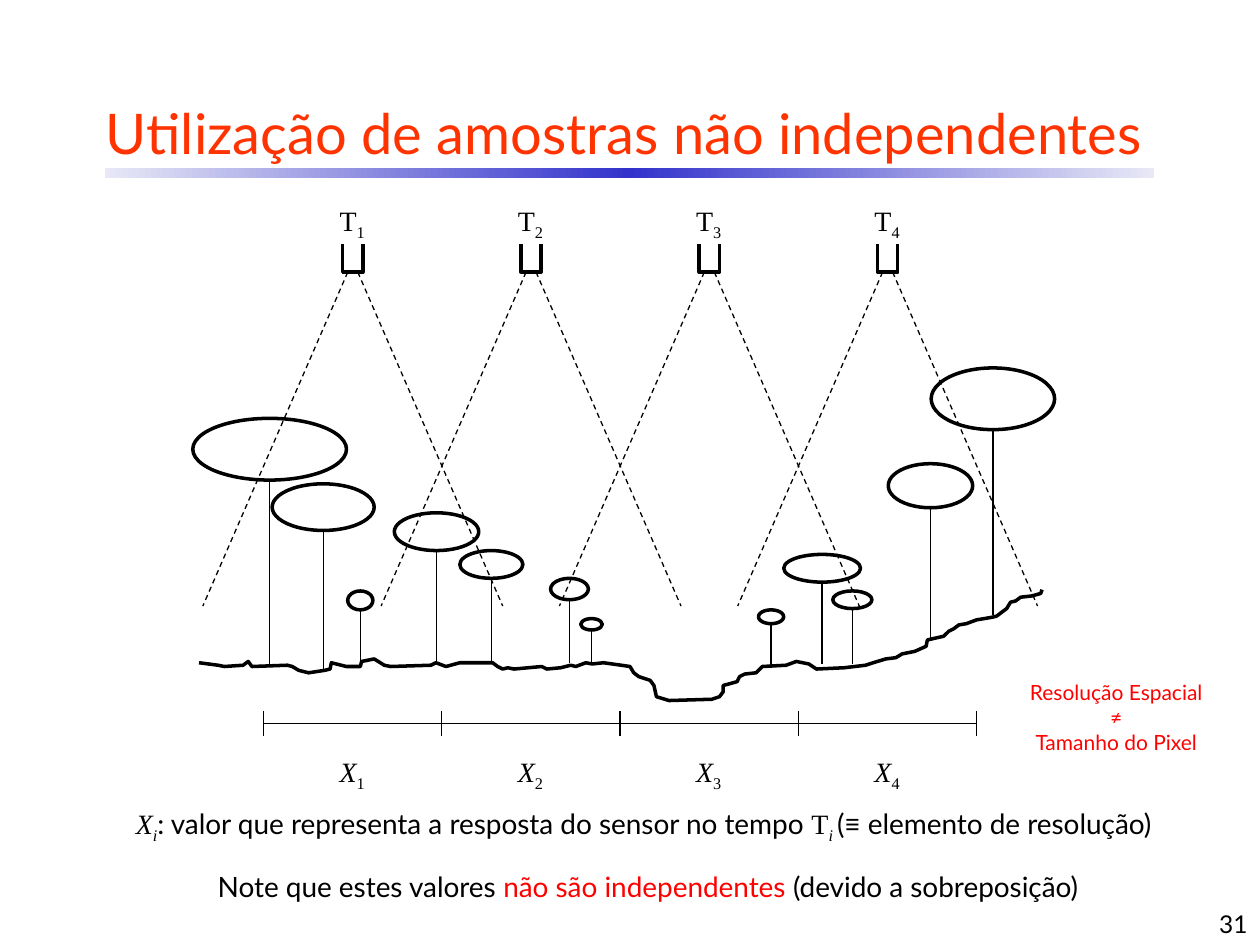
import copy
from typing import NamedTuple

import pptx
import pptx.dml.color
import pptx.enum.dml
import pptx.enum.shapes
import pptx.enum.text
import pptx.oxml.ns
import pptx.util
from lxml import etree

Inches = pptx.util.Inches
Align = pptx.enum.text.PP_ALIGN
Anchor = pptx.enum.text.MSO_ANCHOR

COLORS = {"ink": "000000", "title": "FF3300", "accent": "FF0000",
          "bar": "3333CC", "bar_edge": "E8E8F6"}
SANS, SERIF = "Lato", "Times New Roman"
THICK, THIN = 2, 0.75

SENSORS = 4
PITCH = 1.415
FIRST_CENTER = 2.8
AXIS_LEFT, AXIS_Y, TICK = 2.09, 5.74, 0.1


class Run(NamedTuple):
    text: str
    font: str = SANS
    color: str = "ink"
    italic: bool = False
    sub: bool = False


class Tree(NamedTuple):
    left: float
    top: float
    width: float
    height: float
    foot: float


TREES = [
    Tree(2.16, 3.84, 0.81, 0.37, 5.31), Tree(2.76, 4.69, 0.2, 0.15, 5.28),
    Tree(3.13, 4.07, 0.67, 0.3, 5.26), Tree(3.65, 4.37, 0.5, 0.22, 5.26),
    Tree(6.02, 4.84, 0.2, 0.11, 5.28), Tree(4.37, 4.59, 0.3, 0.17, 5.26),
    Tree(6.22, 4.4, 0.61, 0.22, 5.27), Tree(6.61, 4.69, 0.31, 0.14, 5.27),
    Tree(7.05, 3.68, 0.67, 0.35, 5.06), Tree(7.39, 2.92, 0.98, 0.49, 4.88),
    Tree(1.53, 3.32, 1.22, 0.49, 5.28), Tree(4.61, 4.91, 0.17, 0.09, 5.25),
]

GROUND = [
    (1.58, 5.26), (1.73, 5.28), (1.78, 5.29), (1.93, 5.28), (1.97, 5.25), (2, 5.29),
    (2.28, 5.28), (2.32, 5.29), (2.37, 5.32), (2.45, 5.34), (2.58, 5.32), (2.62, 5.31),
    (2.63, 5.26), (2.75, 5.29), (2.86, 5.29), (2.87, 5.25), (2.97, 5.23), (3.05, 5.28),
    (3.1, 5.29), (3.42, 5.28), (3.46, 5.26), (3.54, 5.29), (3.65, 5.26), (3.91, 5.26),
    (3.95, 5.29), (3.99, 5.31), (4.03, 5.3), (4.08, 5.31), (4.3, 5.29), (4.34, 5.31),
    (4.45, 5.3), (4.53, 5.28), (4.57, 5.29), (4.65, 5.26), (4.7, 5.27), (4.79, 5.26),
    (4.93, 5.28), (5, 5.29), (5.03, 5.34), (5.07, 5.37), (5.16, 5.4), (5.19, 5.44),
    (5.21, 5.53), (5.31, 5.56), (5.65, 5.55), (5.71, 5.53), (5.74, 5.49), (5.74, 5.44),
    (5.78, 5.43), (5.85, 5.41), (5.87, 5.37), (5.91, 5.35), (6, 5.34), (6.05, 5.29),
    (6.24, 5.28), (6.32, 5.25), (6.42, 5.27), (6.48, 5.31), (6.7, 5.3), (6.87, 5.28),
    (6.93, 5.26), (7.03, 5.23), (7.11, 5.22), (7.16, 5.19), (7.26, 5.17), (7.35, 5.13),
    (7.36, 5.08), (7.4, 5.07), (7.49, 5.05), (7.53, 5.01), (7.57, 4.99), (7.61, 4.96),
    (7.67, 4.95), (7.75, 4.92), (7.87, 4.9), (7.91, 4.89), (7.99, 4.83), (8.02, 4.78),
    (8.06, 4.77), (8.1, 4.74), (8.19, 4.73), (8.26, 4.71), (8.27, 4.68),
]


def rgb(name: str) -> pptx.dml.color.RGBColor:
    return pptx.dml.color.RGBColor.from_string(COLORS[name])


def outline(shape, weight: float) -> None:
    shape.line.color.rgb = rgb("ink")
    shape.line.width = pptx.util.Pt(weight)


def add_line(slide, start: tuple, end: tuple, dashed: bool = False) -> None:
    line = slide.shapes.add_connector(
        pptx.enum.shapes.MSO_CONNECTOR.STRAIGHT, *map(Inches, (*start, *end)))
    outline(line, THIN)
    if dashed:
        line.line.dash_style = pptx.enum.dml.MSO_LINE.DASH
    etree.SubElement(line._element.spPr, pptx.oxml.ns.qn("a:effectLst"))


def add_path(slide, points: list[tuple]) -> None:
    start, *rest = [(Inches(x), Inches(y)) for x, y in points]
    builder = slide.shapes.build_freeform(*start)
    builder.add_line_segments(rest, close=False)
    path_shape = builder.convert_to_shape()
    path_shape.shadow.inherit = False
    path_shape.fill.background()
    outline(path_shape, THICK)


def add_text(slide, box: tuple, paragraphs: list[list[Run]], *, size: float = 16,
             align=Align.CENTER, anchor=Anchor.TOP, wrap: bool = False) -> None:
    frame = slide.shapes.add_textbox(*map(Inches, box)).text_frame
    frame.word_wrap = wrap
    frame.vertical_anchor = anchor
    for index, runs in enumerate(paragraphs):
        paragraph = frame.add_paragraph() if index else frame.paragraphs[0]
        paragraph.alignment = align
        for part in runs:
            run = paragraph.add_run()
            run.text = part.text
            run.font.size = pptx.util.Pt(size)
            run.font.name = part.font
            run.font.italic = part.italic
            run.font.color.rgb = rgb(part.color)
            if part.sub:
                run._r.get_or_add_rPr().set("baseline", "-25000")


def add_title_bar(slide) -> None:
    bar = slide.shapes.add_shape(pptx.enum.shapes.MSO_SHAPE.RECTANGLE,
                                 *map(Inches, (0.83, 1.33, 8.33, 0.08)))
    bar.shadow.inherit = False
    bar.line.fill.background()
    bar.fill.gradient()
    bar.fill.gradient_angle = 0
    first_stop = bar._element.xpath(".//a:gs")[0]
    first_stop.addnext(copy.deepcopy(first_stop))
    stops = zip(bar.fill.gradient_stops, (0, 0.5, 1), ("bar_edge", "bar", "bar_edge"))
    for stop, position, color in stops:
        stop.position = position
        stop.color.rgb = rgb(color)


def add_tree(slide, tree: Tree) -> None:
    crown = slide.shapes.add_shape(pptx.enum.shapes.MSO_SHAPE.OVAL,
                                   *map(Inches, tree[:4]))
    crown.shadow.inherit = False
    crown.fill.background()
    outline(crown, THICK)
    trunk_x = tree.left + tree.width / 2
    add_line(slide, (trunk_x, tree.top + tree.height), (trunk_x, tree.foot))


def add_sensor(slide, number: int) -> None:
    center = FIRST_CENTER + (number - 1) * PITCH
    top, bottom, half = 1.94, 2.16, 0.08
    add_path(slide, [(center + half, top), (center + half, bottom),
                     (center - half, bottom), (center - half, top)])
    for side in (-1, 1):
        add_line(slide, (center + side * 0.04, bottom), (center + side * 1.19, 4.81),
                 dashed=True)
    for letter, label_top, italic in (("T", 1.57, False), ("X", 5.94, True)):
        add_text(slide, (center - 0.21, label_top, 0.41, 0.37),
                 [[Run(letter, SERIF, italic=italic), Run(str(number), SERIF, sub=True)]])


def main() -> None:
    deck = pptx.Presentation()
    deck.slide_width, deck.slide_height = Inches(10), Inches(7.5)
    slide = deck.slides.add_slide(deck.slide_layouts[6])

    # Heading and slide number
    add_title_bar(slide)
    add_text(slide, (0.33, 0.67, 9.25, 0.75),
             [[Run("Utilização de amostras não independentes", color="title")]],
             size=32, anchor=Anchor.MIDDLE, wrap=True)
    add_text(slide, (7.92, 7, 2.08, 0.5), [[Run("31")]], size=14,
             align=Align.RIGHT, anchor=Anchor.BOTTOM, wrap=True)

    # Landscape
    for tree in TREES:
        add_tree(slide, tree)
    add_path(slide, GROUND)

    # Sensors with their fields of view and labels
    for number in range(1, SENSORS + 1):
        add_sensor(slide, number)

    # Ground axis divided into resolution elements
    ticks = [AXIS_LEFT + index * PITCH for index in range(SENSORS + 1)]
    add_line(slide, (ticks[0], AXIS_Y), (ticks[-1], AXIS_Y))
    for x in ticks:
        add_line(slide, (x, AXIS_Y + TICK), (x, AXIS_Y - TICK))

    # Explanations
    add_text(slide, (0.98, 6.35, 8.62, 0.37), [[
        Run("X", SERIF, italic=True), Run("i", SERIF, italic=True, sub=True),
        Run(": valor que representa a resposta do sensor no tempo "),
        Run("T", SERIF), Run("i ", SERIF, italic=True, sub=True),
        Run("(≡ elemento de resolução)")]], align=Align.LEFT)
    add_text(slide, (1.63, 6.85, 7.24, 0.37), [[
        Run("Note que estes valores "), Run("não são independentes", color="accent"),
        Run(" (devido a sobreposição)")]], align=Align.LEFT)
    add_text(slide, (8.06, 5.34, 1.6, 0.71),
             [[Run(line, color="accent")]
              for line in ("Resolução Espacial", "≠", "Tamanho do Pixel")], size=12)

    deck.save("out.pptx")


if __name__ == "__main__":
    main()
